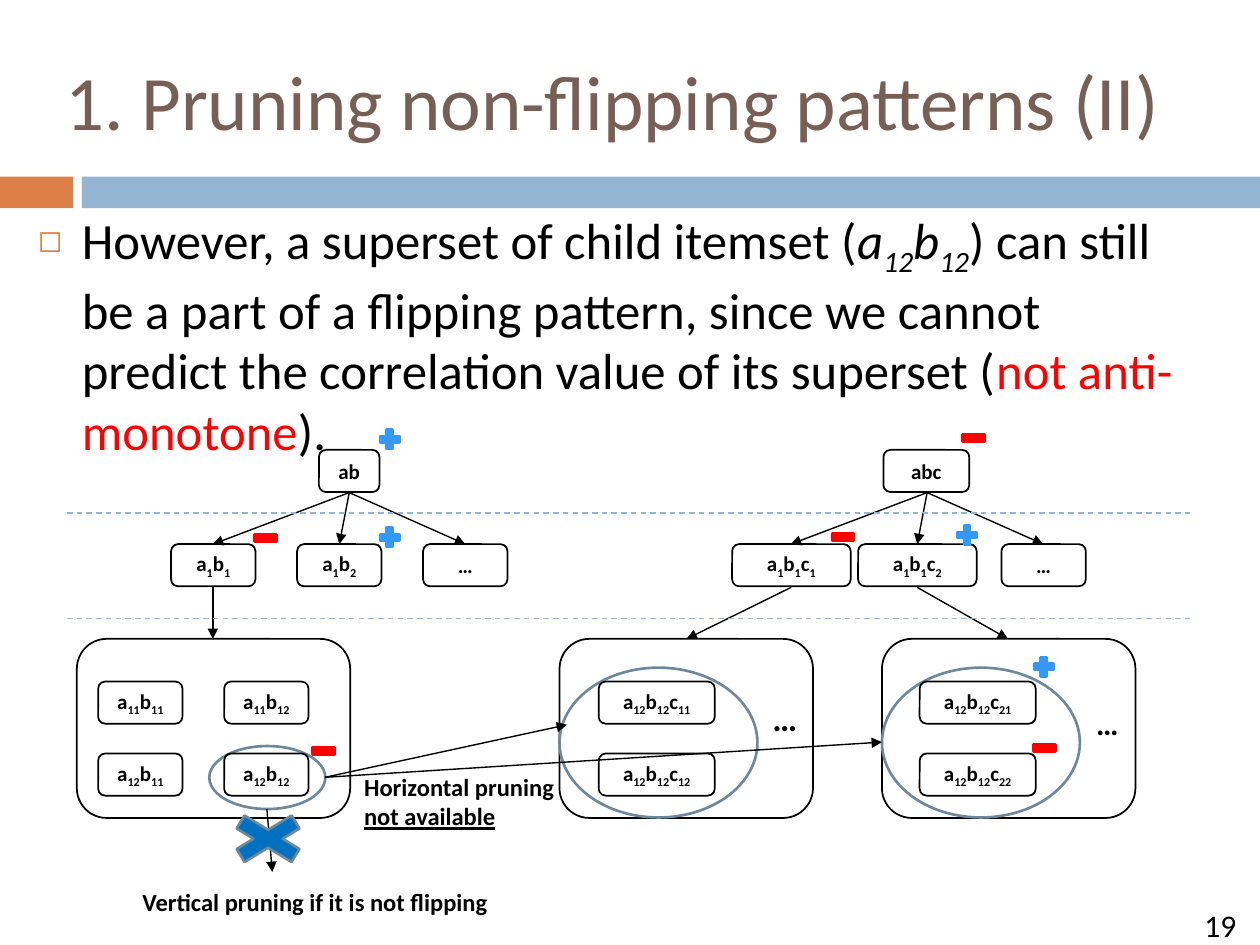
"""Builds the slide on pruning non-flipping patterns."""
from itertools import groupby

from lxml import etree
from pptx import Presentation
from pptx import util as u
from pptx.dml.color import RGBColor
from pptx.enum import dml, shapes, text
from pptx.oxml import ns


class Theme:
    font = "Calibri"
    black, brown, red = "000000", "775F55", "FF0000"
    orange, pale, slate = "DD8047", "94B6D2", "6D879B"
    plus, cross = "3399FF", "0070C0"
    title, body, page, note, node = 44, 29, 18, 14, 12


Kind = shapes.MSO_SHAPE
hue = RGBColor.from_string

deck = Presentation()
deck.slide_width, deck.slide_height = u.Cm(25.4), u.Cm(19.05)
slide = deck.slides.add_slide(deck.slide_layouts[5])


def draw(kind, box, fill=None, line=None, width=1):
    item = slide.shapes.add_shape(kind, *map(u.Cm, box))
    item.shadow.inherit = False
    if fill:
        item.fill.solid()
        item.fill.fore_color.rgb = hue(fill)
    else:
        item.fill.background()
    if line:
        item.line.color.rgb = hue(line)
        item.line.width = u.Pt(width)
    else:
        item.line.fill.background()
    return item


def write(item, parts, size, color=Theme.black, bold=False, align=text.PP_ALIGN.LEFT):
    para = item.text_frame.paragraphs[0]
    para.alignment = align
    font = para.font
    font.name, font.size, font.bold = Theme.font, u.Pt(size), bold
    font.color.rgb = hue(color)
    for words, look in parts:
        run = para.add_run()
        run.text = words
        for key, value in look.items():
            run.font._element.set(key, value)
    return para


for left, width, color in [(0, 1.47, Theme.orange), (1.65, 23.75, Theme.pale)]:
    draw(Kind.RECTANGLE, (left, 3.56, width, 0.64), color)

title = slide.shapes.title
title.left, title.top, title.width, title.height = map(u.Cm, (1.07, 0.64, 23.93, 2.74))
title.text_frame.vertical_anchor = text.MSO_ANCHOR.MIDDLE
write(title, [("1. Pruning non-flipping patterns (II)", {})], Theme.title, Theme.brown)

ital, sub = {"i": "1"}, {"i": "1", "baseline": "-25000"}
claim = [
    ("However, a superset of child itemset (", {}),
    ("a", ital), ("12", sub), ("b", ital), ("12", sub),
    (") can still be a part of a flipping pattern, since we cannot predict "
     "the correlation value of its superset (", {}),
    ("not anti-monotone", {}),
    (").", {}),
]
notes = [
    ((0.51, 4.09, 23.85, 5.49), claim, Theme.body, False),
    ((24.03, 18.14, 1.47, 0.69), [("19", {})], Theme.page, False),
    ((2.62, 17.75, 8.46, 0.86), [("Vertical pruning if it is not flipping", {})], Theme.note, True),
    ((7.09, 15.44, 4.62, 1.45),
     [("Horizontal pruning ", {}), ("not available", {"u": "sng"})], Theme.note, True),
]
paras = []
for box, parts, size, bold in notes:
    item = slide.shapes.add_textbox(*map(u.Cm, box))
    item.text_frame.word_wrap = True
    paras.append(write(item, parts, size, bold=bold))

body = paras[0]
body.space_before = u.Pt(7)
body.runs[6].font.color.rgb = hue(Theme.red)
props = body._p.get_or_add_pPr()
props.set("marL", str(u.Cm(0.89)))
props.set("indent", str(-u.Cm(0.89)))
tint = etree.Element(ns.qn("a:buClr"))
etree.SubElement(tint, ns.qn("a:srgbClr"), val=Theme.orange)
scale = etree.Element(ns.qn("a:buSzPct"), val="60000")
mark = etree.Element(ns.qn("a:buChar"), char="◻")
for part in (tint, scale, mark):
    props.find(ns.qn("a:defRPr")).addprevious(part)

for left, width in [(1.55, 5.51), (11.28, 5.11), (17.78, 5.11)]:
    draw(Kind.ROUNDED_RECTANGLE, (left, 12.88, width, 3.61), line=Theme.black)
for box in [(4.22, 15.04, 2.34, 1.27), (11.28, 13.46, 3.99, 3.02), (17.78, 13.46, 3.99, 3.02)]:
    draw(Kind.OVAL, box, line=Theme.slate, width=1.5)

rows = [
    (9.07, [("ab", 6.43, 1.22), ("abc", 17.81, 1.73)]),
    (10.97, [("a1b1", 3.45, 1.7), ("a1b2", 5.99, 1.7), ("…", 8.53, 1.7),
             ("a1b1c1", 14.76, 2.39), ("a1b1c2", 17.3, 2.39), ("…", 20.19, 1.7)]),
    (13.74, [("a11b11", 1.98, 1.7), ("a11b12", 4.52, 1.7),
             ("a12b12c11", 12.07, 2.34), ("a12b12c21", 18.54, 2.34)]),
    (15.19, [("a12b11", 1.98, 1.7), ("a12b12", 4.52, 1.7),
             ("a12b12c12", 12.07, 2.34), ("a12b12c22", 18.54, 2.34)]),
]
nodes = [(name, (left, top, width, 0.85), Theme.node, Theme.black)
         for top, row in rows for name, left, width in row]
nodes += [("…", (15.09, 14.05, 1.47, 0.85), 20, None),
          ("…", (21.59, 14.15, 1.47, 0.85), 18, None)]
for name, box, size, line in nodes:
    node = draw(Kind.ROUNDED_RECTANGLE, box, line=line)
    frame = node.text_frame
    frame.margin_left = frame.margin_right = frame.margin_top = frame.margin_bottom = 0
    frame.vertical_anchor = text.MSO_ANCHOR.MIDDLE
    parts = [("".join(run), {"baseline": "-25000"} if low else {})
             for low, run in groupby(name, str.isdigit)]
    write(node, parts, size, bold=True, align=text.PP_ALIGN.CENTER)

arrows = [(root, 9.93, root + shift, 10.97)
          for root in (7.04, 18.69) for shift in (-2.75, -0.2, 2.34)]
arrows += [
    (4.29, 11.84, 4.29, 12.88), (15.95, 11.84, 13.84, 12.88),
    (18.49, 11.84, 20.32, 12.88), (5.38, 16.31, 5.49, 17.58),
    (6.55, 15.67, 17.78, 14.96), (6.55, 15.67, 11.43, 14.61),
]
rules = [(1.35, top, 23.98, top) for top in (10.34, 12.47)]
for ends in arrows + rules:
    link = slide.shapes.add_connector(shapes.MSO_CONNECTOR.STRAIGHT, *map(u.Cm, ends))
    link.line.width = u.Pt(0.79)
    if ends in rules:
        link.line.color.rgb = hue(Theme.pale)
        link.line.dash_style = dml.MSO_LINE.DASH
    else:
        link.line.color.rgb = hue(Theme.black)
        etree.SubElement(link.line._get_or_add_ln(), ns.qn("a:tailEnd"), type="triangle")
    etree.SubElement(link._element.spPr, ns.qn("a:effectLst"))

signs = [
    (Kind.MATH_PLUS, 0.53, Theme.plus,
     [(7.59, 8.59), (7.59, 10.57), (19.23, 10.52), (20.78, 13.18)]),
    (Kind.MATH_MINUS, 0.61, Theme.red,
     [(5.05, 10.54), (19.33, 8.53), (16.69, 10.52), (6.22, 14.83), (20.75, 14.78)]),
]
for kind, size, color, spots in signs:
    for left, top in spots:
        draw(kind, (left, top, size, size), color, color, 1.5)
draw(Kind.MATH_MULTIPLY, (4.34, 16.26, 2.13, 1.3), Theme.cross, Theme.slate, 1.5)

deck.save("out.pptx")
